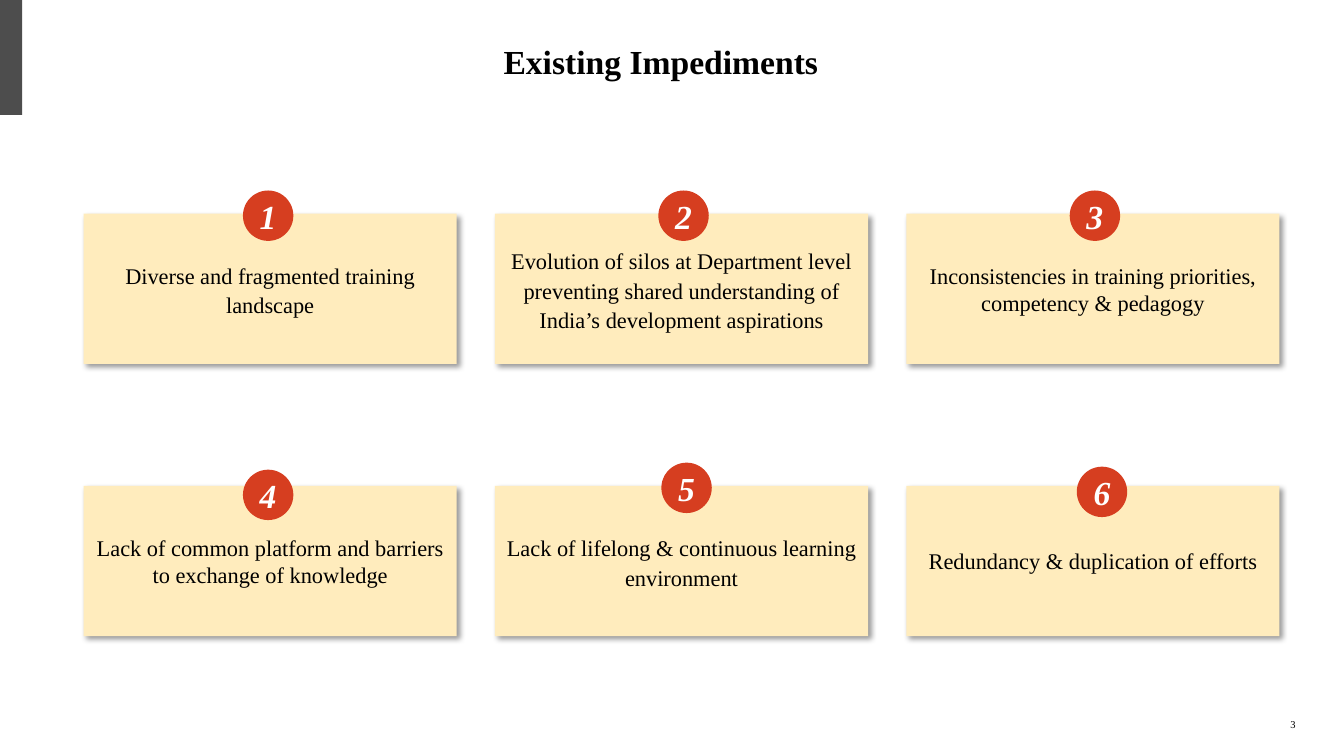
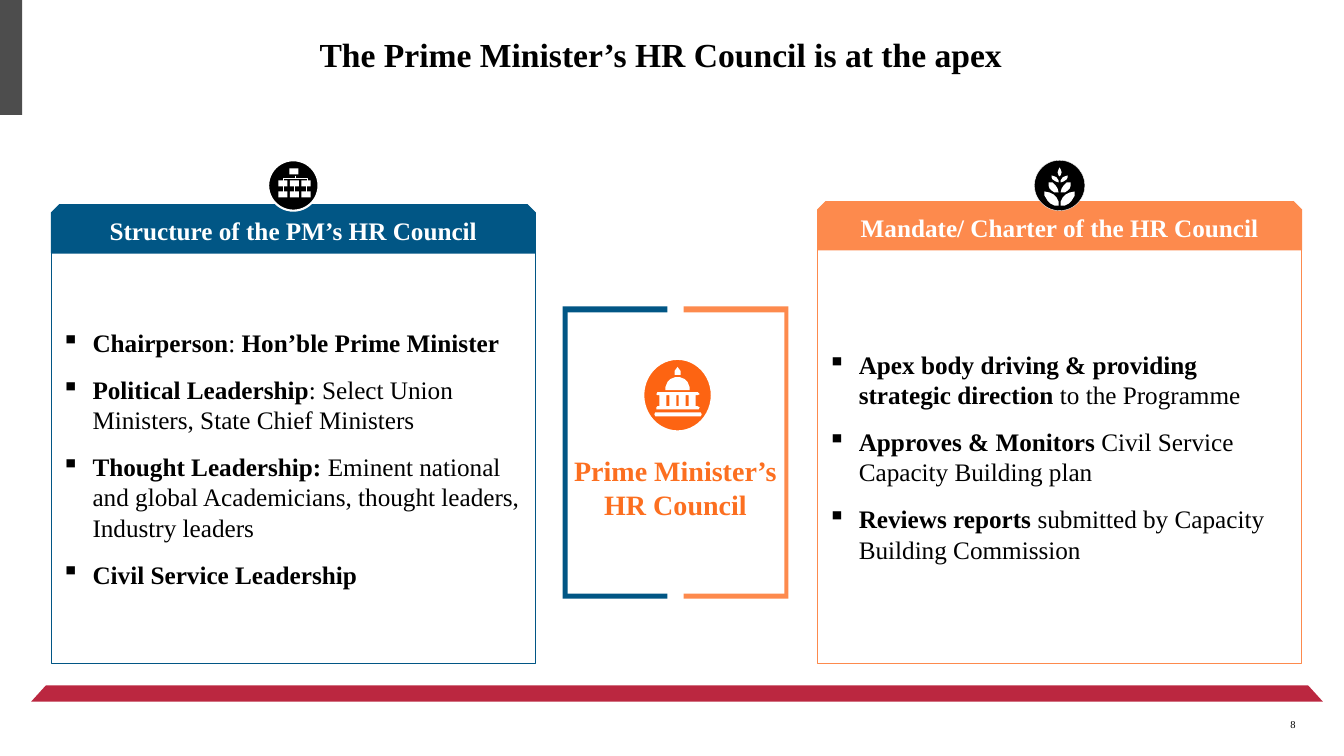
from lxml import etree
from pptx import Presentation
from pptx import util as u
from pptx.dml.color import RGBColor
from pptx.enum import shapes, text
from pptx.oxml import parse_xml
from pptx.oxml.ns import nsdecls, qn

FONT = "Times New Roman"
BLACK, WHITE, GREY = "000000", "FFFFFF", "4D4D4D"
CREAM, RED, CRIMSON = "FFECBD", "D63E20", "BB2740"
BLUE, ORANGE, DEEP_ORANGE, TEXT_ORANGE = "015685", "FD8A4D", "FD6412", "FC6F20"
KIND, ALIGN, ANCHOR = shapes.MSO_SHAPE, text.PP_ALIGN, text.MSO_ANCHOR
LINK = shapes.MSO_CONNECTOR
rgb = RGBColor.from_string


def add_box(slide, kind, at, fill, line=None, line_width=0.75):
    shape = slide.shapes.add_shape(kind, *map(u.Inches, at))
    shape.shadow.inherit = False
    shape.fill.solid()
    shape.fill.fore_color.rgb = rgb(fill)
    if line:
        shape.line.color.rgb = rgb(line)
        shape.line.width = u.Pt(line_width)
    else:
        shape.line.fill.background()
    return shape


def write(shape, paragraphs, size, color=BLACK, align=ALIGN.CENTER, anchor=ANCHOR.MIDDLE,
          margins=(0.1, 0.05, 0.1, 0.05), spacing=1.0, after=0, italic=False, bullet=None):
    """Fill a shape with paragraphs, each a list of (text, bold) runs."""
    frame = shape.text_frame
    frame.word_wrap = True
    frame.vertical_anchor = anchor
    (frame.margin_left, frame.margin_top,
     frame.margin_right, frame.margin_bottom) = map(u.Inches, margins)
    for index, runs in enumerate(paragraphs):
        paragraph = frame.add_paragraph() if index else frame.paragraphs[0]
        paragraph.alignment = align
        paragraph.line_spacing = spacing
        paragraph.space_after = u.Pt(after)
        if bullet:
            properties = paragraph._p.get_or_add_pPr()
            properties.set("marL", str(u.Inches(0.31)))
            properties.set("indent", str(u.Inches(-0.31)))
            etree.SubElement(properties, qn("a:buChar")).set("char", bullet)
        for words, bold in runs:
            run = paragraph.add_run()
            run.text = words
            run.font.name, run.font.size = FONT, u.Pt(size)
            run.font.bold, run.font.italic = bold, italic
            run.font.color.rgb = rgb(color)


presentation = Presentation()
presentation.slide_width, presentation.slide_height = u.Inches(13.33), u.Inches(7.5)

# Shared frame: corner band, title and page number
slides = []
for title, spacing, number in [("Existing Impediments", 1.2, "3"),
                               ("The Prime Minister’s HR Council is at the apex", 0.85, "8")]:
    slide = presentation.slides.add_slide(presentation.slide_layouts[6])
    add_box(slide, KIND.RECTANGLE, (0, 0, 0.22, 1.14), GREY)
    title_box = slide.shapes.add_textbox(*map(u.Inches, (0.48, 0, 12.03, 1.14)))
    write(title_box, [[(title, True)]], 24, margins=(0.16, 0.04, 0.04, 0.04), spacing=spacing)
    number_box = slide.shapes.add_textbox(*map(u.Inches, (10.92, 7.1, 1.93, 0.15)))
    write(number_box, [[(number, False)]], 7.5, align=ALIGN.RIGHT, anchor=ANCHOR.BOTTOM,
          margins=(0, 0, 0, 0))
    slides.append(slide)
impediments, council = slides

# Impediments: three columns and two rows of numbered cards
CARD_LEFT, CARD_TOP, COLUMN_STEP, ROW_STEP = 0.83, 2.12, 4.08, 2.7
cards = [  # text, line spacing, badge left, badge top
    ("Diverse and fragmented training landscape", 1.1, 2.41, 1.89),
    ("Evolution of silos at Department level preventing shared understanding of "
     "India’s development aspirations", 1.1, 6.53, 1.89),
    ("Inconsistencies in training priorities, competency & pedagogy", 1.0, 10.61, 1.89),
    ("Lack of common platform and barriers to exchange of knowledge", 1.0, 2.41, 4.66),
    ("Lack of lifelong & continuous learning environment", 1.1, 6.56, 4.59),
    ("Redundancy & duplication of efforts", 1.0, 10.68, 4.63),
]
for index, (words, spacing, badge_left, badge_top) in enumerate(cards):
    row, column = divmod(index, 3)
    card = add_box(impediments, KIND.RECTANGLE,
                   (CARD_LEFT + column * COLUMN_STEP, CARD_TOP + row * ROW_STEP, 3.7, 1.49), CREAM)
    card._element.spPr.find(qn("a:effectLst")).append(parse_xml(
        f'<a:outerShdw {nsdecls("a")} blurRad="{u.Pt(4)}" dist="{u.Pt(3)}" dir="2700000" '
        f'algn="tl" rotWithShape="0"><a:srgbClr val="{BLACK}"><a:alpha val="40000"/>'
        '</a:srgbClr></a:outerShdw>'))
    write(card, [[(words, False)]], 16, spacing=spacing)
    badge = add_box(impediments, KIND.OVAL, (badge_left, badge_top, 0.5, 0.5), RED)
    write(badge, [[(str(index + 1), True)]], 24, WHITE, italic=True, margins=(0, 0, 0, 0))

# Council: a panel on each side
panels = [
    (0.51, 2.03, BLUE, "Structure of the PM’s HR Council", [
        [("Chairperson", True), (": ", False), ("Hon’ble Prime Minister", True)],
        [("Political Leadership", True), (": Select Union Ministers, State Chief Ministers", False)],
        [("Thought Leadership:", True),
         (" Eminent national and global Academicians, thought leaders, Industry leaders", False)],
        [("Civil Service Leadership", True)]]),
    (8.11, 2.0, ORANGE, "Mandate/ Charter of the HR Council", [
        [("Apex body driving & providing strategic direction", True), (" to the Programme", False)],
        [("Approves & Monitors ", True), ("Civil Service Capacity Building plan", False)],
        [("Reviews reports ", True), ("submitted by Capacity Building Commission", False)]]),
]
HEADER_HEIGHT, PANEL_BOTTOM = 0.48, 6.58
for left, top, color, heading, points in panels:
    body_top = top + HEADER_HEIGHT
    body = add_box(council, KIND.RECTANGLE, (left, body_top, 4.8, PANEL_BOTTOM - body_top),
                   WHITE, color)
    write(body, points, 18, align=ALIGN.LEFT, after=12, bullet="▪")
    header = add_box(council, KIND.SNIP_2_SAME_RECTANGLE, (left, top, 4.8, HEADER_HEIGHT),
                     color, color)
    write(header, [[(heading, True)]], 18, WHITE, after=12)

# Organisation chart icon
add_box(council, KIND.OVAL, (2.66, 1.59, 0.5, 0.5), BLACK, WHITE, 1.5)
add_box(council, KIND.RECTANGLE, (2.87, 1.67, 0.09, 0.06), WHITE)
links = []
for column in range(3):
    upper, lower = [add_box(council, KIND.RECTANGLE, (2.76 + column * 0.115, top, 0.09, 0.06), WHITE)
                    for top in (1.79, 1.9)]
    link = council.shapes.add_connector(LINK.STRAIGHT, 0, 0, 0, 0)
    link.begin_connect(upper, 2)
    link.end_connect(lower, 0)
    links.append(link)
for start, end, turn in [(2.84, 2.89, 90), (3.01, 2.96, 270)]:
    link = council.shapes.add_connector(LINK.ELBOW, *map(u.Inches, (start, 1.71, end, 1.83)))
    link._element.spPr.find(qn("a:xfrm")).set("rot", str(turn * 60000))
    links.append(link)
for link in links:
    link.line.color.rgb = rgb(WHITE)
    link.line.width = u.Pt(0.25)
    etree.SubElement(link._element.spPr, qn("a:effectLst"))

# Central frame, one half per panel colour
for left, inner_left, color in [(5.58, 5.63, BLUE), (6.78, 6.63, ORANGE)]:
    add_box(council, KIND.RECTANGLE, (left, 3.04, 1.04, 2.9), color)
    add_box(council, KIND.RECTANGLE, (inner_left, 3.1, 1.15, 2.79), WHITE)
add_box(council, KIND.OVAL, (10.26, 1.59, 0.5, 0.5), BLACK, WHITE, 0.25)
add_box(council, KIND.OVAL, (6.38, 3.56, 0.68, 0.72), DEEP_ORANGE, WHITE, 1.5)

# Icon outlines in hundredths of an inch; leaves mirror around the stem
STEM = 1051
right_leaves = [
    [(15, 190), (15, 194), (12, 199), (9, 202), (5, 204), (1, 204), (1, 200), (3, 196),
     (6, 193), (10, 191)],
    [(4, 184), (2, 187), (1, 191), (5, 191), (8, 189), (10, 187), (11, 184), (11, 181), (7, 181)],
    [(3, 176), (1, 179), (1, 181), (4, 180), (7, 178), (8, 176), (8, 174), (5, 175)],
]
plant = [[(STEM + side * x, y) for x, y in leaf] for leaf in right_leaves for side in (1, -1)]
plant.append([(STEM + x, y) for x, y in [(-2, 171), (-1, 174), (0, 175), (1, 174), (2, 171),
                                         (1, 168), (0, 166), (-1, 168)]])
capitol = [
    [(652, 403), (651, 404), (651, 406), (652, 406), (692, 406), (693, 406), (694, 404),
     (692, 403), (690, 403), (690, 392), (692, 392), (694, 391), (692, 389), (652, 389),
     (651, 391), (652, 392), (654, 392), (654, 403)],
    [(696, 411), (695, 413), (693, 413), (651, 413), (650, 413), (649, 411), (650, 409),
     (651, 409), (693, 409), (695, 409)],
    [(684, 387), (660, 387), (660, 384), (662, 379), (665, 376), (670, 374), (674, 374),
     (679, 376), (682, 379), (684, 384)],
    [(675, 372), (669, 372), (669, 368), (672, 364), (675, 368)],
]
capitol += [[(left, 392), (left, 403), (right, 403), (right, 392)]
            for left, right in [(661, 664), (671, 673), (680, 683)]]
for outlines in (plant, capitol):
    builder = council.shapes.build_freeform(*outlines[0][0], scale=u.Inches(0.01))
    for index, outline in enumerate(outlines):
        if index:
            builder.move_to(*outline[0])
        builder.add_line_segments(outline[1:], close=True)
    icon = builder.convert_to_shape()
    icon.shadow.inherit = False
    icon.fill.solid()
    icon.fill.fore_color.rgb = rgb(WHITE)
    icon.line.fill.background()

caption = council.shapes.add_textbox(*map(u.Inches, (5.66, 4.5, 2.08, 0.67)))
write(caption, [[("Prime Minister’s HR Council", True)]], 20, TEXT_ORANGE,
      anchor=ANCHOR.TOP, margins=(0, 0, 0, 0), after=6)
base = add_box(council, KIND.TRAPEZOID, (0.31, 6.8, 12.81, 0.16), CRIMSON)
base.adjustments[0] = 0.908

presentation.save("out.pptx")
